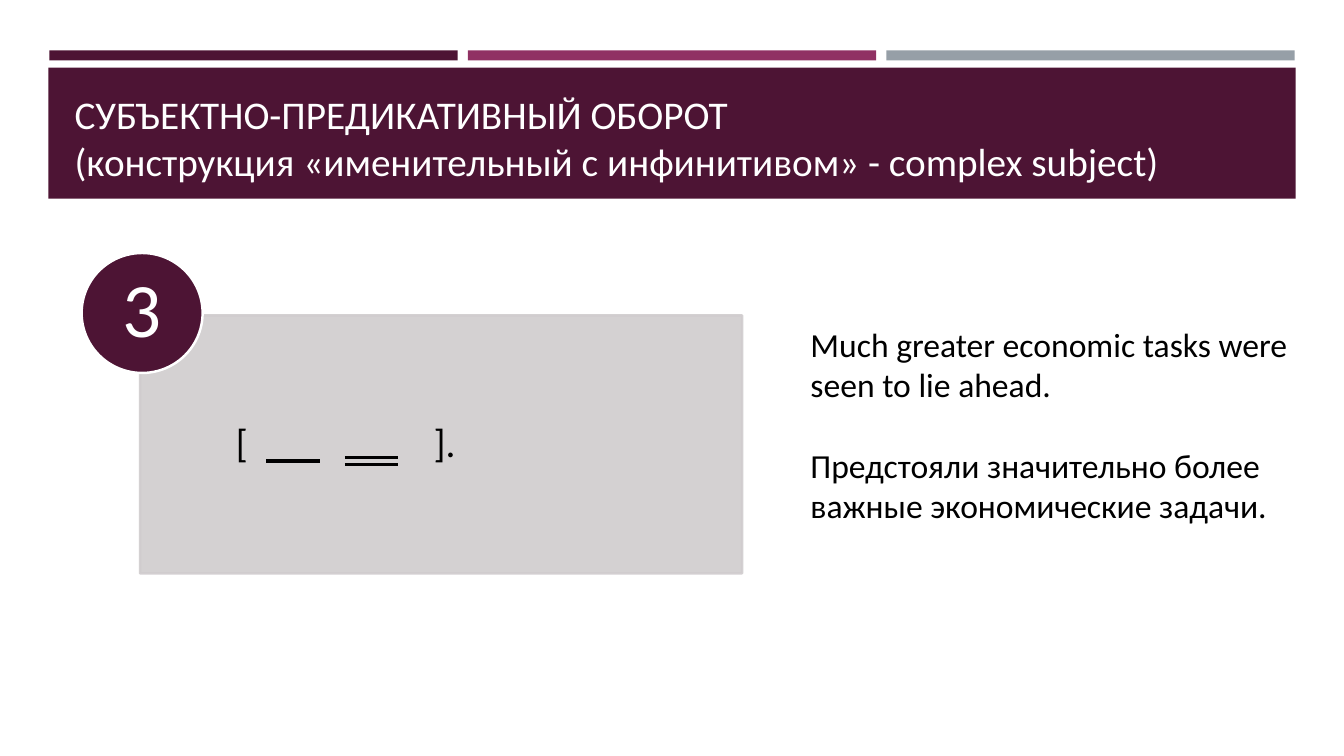
import pptx
import pptx.util
import pptx.dml.color
import pptx.enum.shapes
import pptx.enum.text
import pptx.oxml
import pptx.oxml.ns

Inches = pptx.util.Inches
Pt = pptx.util.Pt
RGBColor = pptx.dml.color.RGBColor
Kind = pptx.enum.shapes.MSO_SHAPE
Anchor = pptx.enum.text.MSO_ANCHOR
Align = pptx.enum.text.PP_ALIGN
qn = pptx.oxml.ns.qn

PLUM = RGBColor(0x4D, 0x14, 0x34)
PINK = RGBColor(0x90, 0x31, 0x63)
SLATE = RGBColor(0x96, 0x9F, 0xA7)
GREY = RGBColor(0xD0, 0xCC, 0xCE)
WHITE = RGBColor(255, 255, 255)
BLACK = RGBColor(0, 0, 0)
FONT = "Calibri"


def add_shape(slide, kind, box, fill, edge=None):
    shape = slide.shapes.add_shape(kind, *map(Inches, box))
    shape.shadow.inherit = False
    shape.fill.solid()
    shape.fill.fore_color.rgb = fill
    if edge is None:
        shape.line.fill.background()
    else:
        shape.line.color.rgb = edge
        shape.line.width = Pt(1.75)
    return shape


def set_frame(shape, anchor, insets):
    frame = shape.text_frame
    frame.word_wrap = True
    frame.vertical_anchor = anchor
    (frame.margin_left, frame.margin_top,
     frame.margin_right, frame.margin_bottom) = map(Inches, insets)
    return frame


def add_run(para, text, size, color):
    run = para.add_run()
    run.text = text
    run.font.size = Pt(size)
    run.font.name = FONT
    run.font.color.rgb = color


def add_line(slide, left, top, width, weight):
    line = slide.shapes.add_connector(
        pptx.enum.shapes.MSO_CONNECTOR.STRAIGHT,
        Inches(left), Inches(top), Inches(left + width), Inches(top))
    line.line.color.rgb = BLACK
    line.line.width = Pt(weight)
    props = line._element.spPr
    props.append(props.makeelement(qn("a:effectLst"), {}))


def set_alpha(shape, percent):
    for color in shape._element.spPr.iter(qn("a:srgbClr")):
        alpha = color.makeelement(qn("a:alpha"), {"val": str(percent * 1000)})
        color.append(alpha)


def set_tab(para, place):
    props = para._p.get_or_add_pPr()
    tabs = props.makeelement(qn("a:tabLst"), {})
    tabs.append(tabs.makeelement(
        qn("a:tab"), {"pos": str(Inches(place)), "algn": "l"}))
    props.append(tabs)


def add_head(slide):
    # Three stripes above the title band
    for i, color in enumerate((PLUM, PINK, SLATE)):
        add_shape(slide, Kind.RECTANGLE, (0.49 + 4.15 * i, 0.5, 4.05, 0.1), color)
    band = add_shape(slide, Kind.RECTANGLE, (0.48, 0.67, 12.37, 1.3), PLUM)
    para = set_frame(band, Anchor.BOTTOM, (0.26, 0.1, 0.25, 0.14)).paragraphs[0]
    para.alignment = Align.LEFT
    add_run(para, "СУБЪЕКТНО-ПРЕДИКАТИВНЫЙ ОБОРОТ", 28, WHITE)
    para.add_line_break()
    add_run(para, "(конструкция «именительный с инфинитивом» - complex subject)",
            28, WHITE)


def add_scheme(slide):
    # Panel with the bracketed sentence pattern
    panel = add_shape(slide, Kind.RECTANGLE, (1.39, 3.13, 5.97, 2.56), GREY, GREY)
    set_alpha(panel, 90)
    para = set_frame(panel, Anchor.MIDDLE, (0.95, 0.22, 0.22, 0.22)).paragraphs[0]
    para.alignment = Align.LEFT
    para.line_spacing = 0.9
    set_tab(para, 1.96)
    add_run(para, "[\t].", 28, BLACK)

    # Subject has one rule, predicate has two
    add_line(slide, 2.64, 4.57, 0.53, 2.75)
    for top in (4.54, 4.61):
        add_line(slide, 3.42, top, 0.53, 1.75)

    # Number badge
    badge = add_shape(slide, Kind.OVAL, (0.81, 2.51, 1.2, 1.19), PLUM, WHITE)
    para = set_frame(badge, Anchor.MIDDLE, (0, 0, 0, 0)).paragraphs[0]
    para.alignment = Align.CENTER
    para.line_spacing = 0.9
    add_run(para, "3", 55, WHITE)


def add_sample(slide):
    # Example sentence and its translation
    box = slide.shapes.add_textbox(*map(Inches, (7.94, 3.16, 5, 2.12)))
    frame = set_frame(box, Anchor.TOP, (0.1, 0.05, 0.1, 0.05))
    add_run(frame.paragraphs[0],
            "Much greater economic tasks were seen to lie ahead.", 24, BLACK)
    para = frame.add_paragraph()
    para.space_before = Pt(29)
    add_run(para, "Предстояли значительно более важные экономические задачи.",
            24, BLACK)


def main():
    deck = pptx.Presentation()
    deck.slide_width = Inches(13.33)
    deck.slide_height = Inches(7.5)
    slide = deck.slides.add_slide(deck.slide_layouts[6])
    add_head(slide)
    add_scheme(slide)
    add_sample(slide)
    deck.save("out.pptx")


if __name__ == "__main__":
    main()
